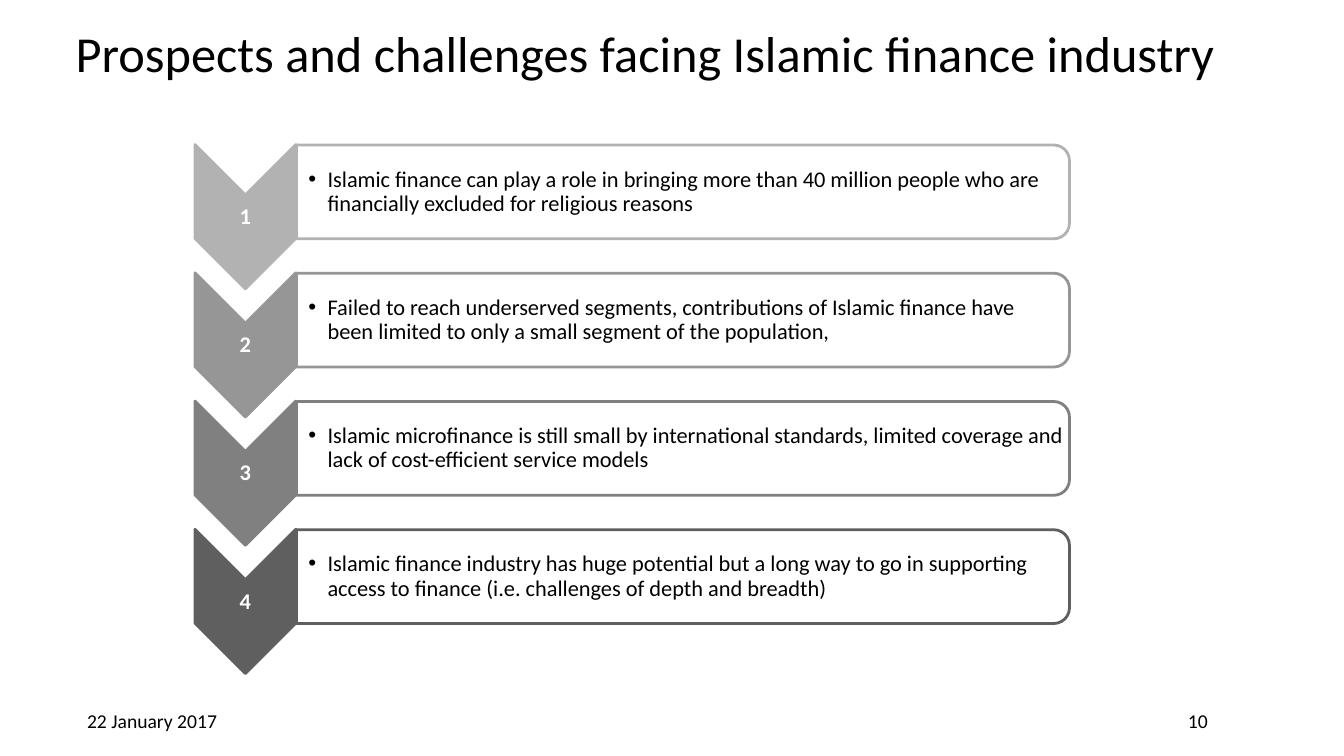
from lxml.etree import SubElement
from pptx import Presentation
from pptx.dml.color import RGBColor
from pptx.enum.shapes import MSO_SHAPE as SHAPE
from pptx.enum.text import MSO_ANCHOR as ANCHOR, MSO_AUTO_SIZE as AUTO, PP_ALIGN as ALIGN
from pptx.oxml.ns import qn
from pptx.util import Pt

FONT = "Calibri"
ROW_TOP, ROW_PITCH = 137.1, 91.6  # centre of the first box, step between rows
CHEVRON_X, BOX_X = 175.3, 487.8   # centres of the two columns

POINTS = [
    ("B2B2B2", "Islamic finance can play a role in bringing more than 40 million "
               "people who are financially excluded for religious reasons"),
    ("969696", "Failed to reach underserved segments, contributions of Islamic finance "
               "have been limited to only a small segment of the population,"),
    ("808080", "Islamic microfinance is still small by international standards, "
               "limited coverage and lack of cost-efficient service models"),
    ("5F5F5F", "Islamic finance industry has huge potential but a long way to go in "
               "supporting access to finance (i.e. challenges of depth and breadth)"),
]


def rgb(value):
    return RGBColor.from_string(value)


def write(tf, text, size, color="000000", bold=False, align=ALIGN.LEFT, spacing=0.9):
    tf.word_wrap = True
    tf.auto_size = AUTO.NONE
    tf.vertical_anchor = ANCHOR.MIDDLE
    p = tf.paragraphs[0]
    p.alignment = align
    p.line_spacing = spacing
    r = p.add_run()
    r.text = text
    r.font.name, r.font.size, r.font.bold = FONT, Pt(size), bold
    r.font.color.rgb = rgb(color)
    return p


def add_text(slide, x, y, w, h, text, size, inset=None, **style):
    tf = slide.shapes.add_textbox(Pt(x), Pt(y), Pt(w), Pt(h)).text_frame
    if inset is not None:
        tf.margin_left = Pt(inset)
        tf.margin_top = tf.margin_right = tf.margin_bottom = Pt(0.8)
    return write(tf, text, size, **style)


def add_turned(slide, kind, cx, cy, w, h, fill, line):
    """Add a shape centred on (cx, cy) and turned a quarter clockwise."""
    s = slide.shapes.add_shape(kind, Pt(cx - w / 2), Pt(cy - h / 2), Pt(w), Pt(h))
    s.rotation = 90
    s.shadow.inherit = False
    s.fill.solid()
    s.fill.fore_color.rgb = rgb(fill)
    s.line.color.rgb = rgb(line)
    s.line.width = Pt(2)
    return s


def add_bullet(p):
    pPr = p._p.get_or_add_pPr()
    pPr.set("marL", str(Pt(13.7)))
    pPr.set("indent", str(-Pt(13.7)))
    SubElement(pPr, qn("a:buFont"), typeface="Arial")
    SubElement(pPr, qn("a:buChar"), char="•")


def add_row(slide, number, cy, color, text):
    # Numbered chevron
    add_turned(slide, SHAPE.CHEVRON, CHEVRON_X, cy + 17.7, 103, 72, color, color)
    add_text(slide, CHEVRON_X - 36, cy + 2.6, 72, 31, str(number), 16, inset=0.8,
             color="FFFFFF", bold=True, align=ALIGN.CENTER)
    # Box with its statement
    box = add_turned(slide, SHAPE.ROUND_2_SAME_RECTANGLE, BOX_X, cy, 67, 552.2, "FFFFFF", color)
    fill_color = box._element.spPr.find(qn("a:solidFill"))[0]
    SubElement(fill_color, qn("a:alpha"), val="90000")
    add_bullet(add_text(slide, 211.7, cy - 30.2, 548.6, 60.4, text, 16, inset=8.6))


def main():
    prs = Presentation()
    prs.slide_width, prs.slide_height = Pt(960), Pt(540)
    slide = prs.slides.add_slide(prs.slide_layouts[5])

    # Title
    title = slide.shapes.title
    title.left, title.top, title.width, title.height = Pt(46.8), Pt(1.4), Pt(864.7), Pt(77.8)
    write(title.text_frame, "Prospects and challenges facing Islamic finance industry", 36)

    # Rows
    for i, (color, text) in enumerate(POINTS):
        add_row(slide, i + 1, ROW_TOP + i * ROW_PITCH, color, text)

    # Footer
    for x, w, text in ((0.7, 216, "22 January 2017"), (752.4, 206.6, "10")):
        add_text(slide, x, 500.4, w, 28.8, text, 14, align=ALIGN.CENTER, spacing=1.0)

    prs.save("out.pptx")


if __name__ == "__main__":
    main()
